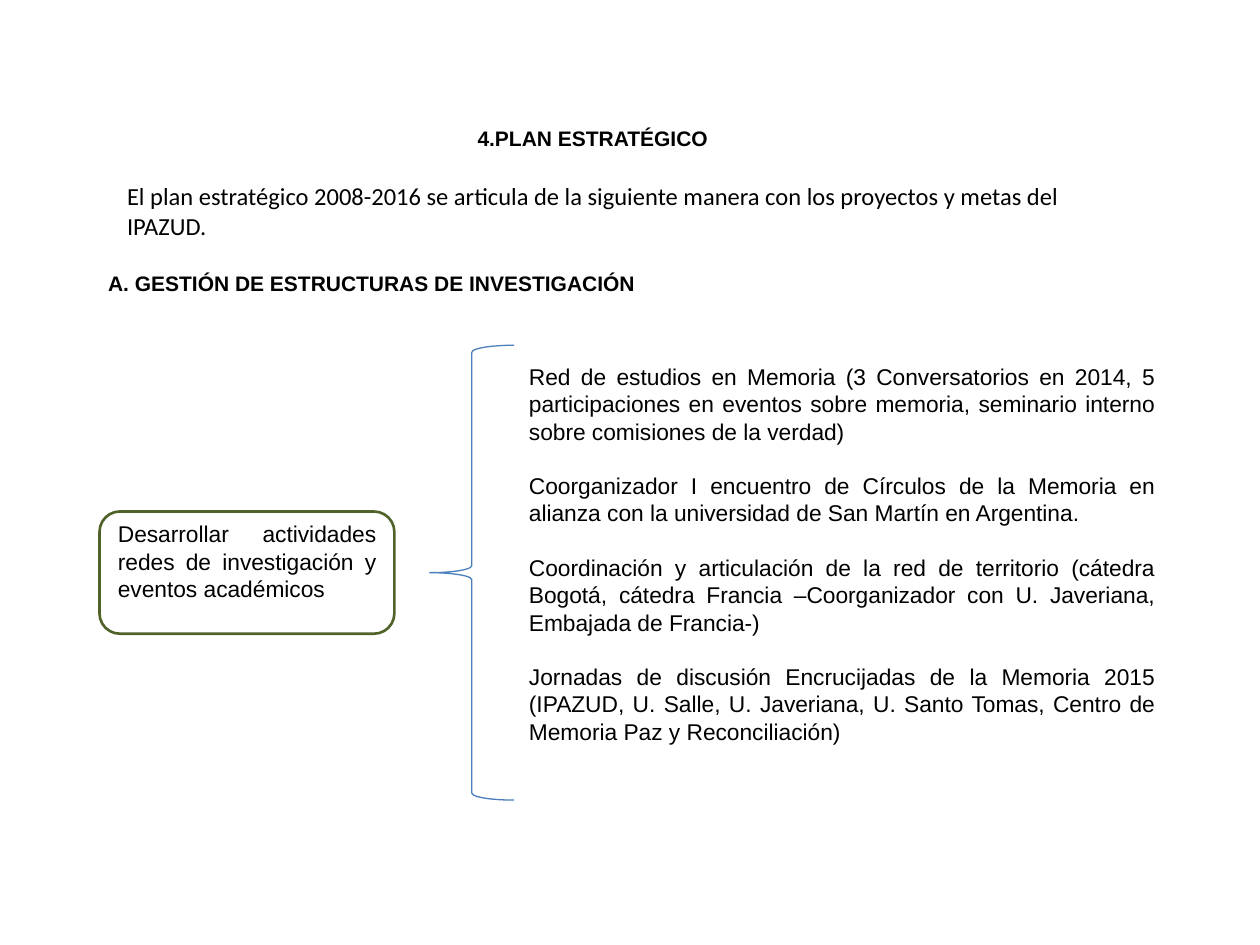
"""Build the strategic plan slide with its braced list of activities."""
from pptx import Presentation
from pptx.dml.color import RGBColor
from pptx.enum.shapes import MSO_SHAPE
from pptx.enum.text import MSO_ANCHOR, PP_ALIGN
from pptx.util import Inches, Pt


def color(value):
    return RGBColor.from_string(value)


def write_text(shape, *texts, font="Arial", size=13, bold=False, align=PP_ALIGN.LEFT,
               anchor=MSO_ANCHOR.TOP, wrap=True, gap=0):
    frame = shape.text_frame
    frame.word_wrap = wrap
    frame.vertical_anchor = anchor
    for index, text in enumerate(texts):
        paragraph = frame.add_paragraph() if index else frame.paragraphs[0]
        paragraph.alignment = align
        if index:
            paragraph.space_before = Pt(gap)
        run = paragraph.add_run()
        run.text = text
        run.font.name = font
        run.font.size = Pt(size)
        run.font.bold = bold
        run.font.color.rgb = color("000000")


presentation = Presentation()
presentation.slide_width = Inches(10)
presentation.slide_height = Inches(7.5)
slide = presentation.slides.add_slide(presentation.slide_layouts[6])
shapes = slide.shapes

title = shapes.add_textbox(Inches(3.01), Inches(0.78), Inches(3.39), Inches(0.63))
write_text(title, "4.PLAN ESTRATÉGICO", size=12, bold=True,
           align=PP_ALIGN.CENTER, anchor=MSO_ANCHOR.MIDDLE)

heading = shapes.add_textbox(Inches(0.76), Inches(2.1), Inches(4.43), Inches(0.3))
write_text(heading, "A. GESTIÓN DE ESTRUCTURAS DE INVESTIGACIÓN",
           size=12, bold=True, wrap=False)

goal = shapes.add_shape(MSO_SHAPE.ROUNDED_RECTANGLE, Inches(0.79), Inches(4.06),
                        Inches(2.34), Inches(0.97))
goal.shadow.inherit = False
goal.fill.solid()
goal.fill.fore_color.rgb = color("FFFFFF")
goal.line.color.rgb = color("4F6228")
goal.line.width = Pt(1.5)
goal.text_frame.margin_top = Inches(0.02)
write_text(goal, "Desarrollar actividades redes de investigación y eventos académicos",
           align=PP_ALIGN.JUSTIFY)

introduction = shapes.add_textbox(Inches(0.91), Inches(1.39), Inches(8.11), Inches(0.57))
write_text(introduction, "El plan estratégico 2008-2016 se articula de la siguiente manera "
           "con los proyectos y metas del IPAZUD.", font="Calibri", size=14)

brace = shapes.add_shape(MSO_SHAPE.LEFT_BRACE, Inches(3.41), Inches(2.74),
                         Inches(0.67), Inches(3.61))
brace.shadow.inherit = False
brace.fill.background()
brace.line.color.rgb = color("4B7EBC")
brace.line.width = Pt(0.75)

activities = shapes.add_textbox(Inches(4.1), Inches(2.83), Inches(5.16), Inches(3.16))
write_text(
    activities,
    "Red de estudios en Memoria (3 Conversatorios en 2014, 5 participaciones en eventos "
    "sobre memoria, seminario interno sobre comisiones de la verdad)",
    "Coorganizador I encuentro de Círculos de la Memoria en alianza con la universidad "
    "de San Martín en Argentina.",
    "Coordinación y articulación de la red de territorio (cátedra Bogotá, cátedra Francia "
    "–Coorganizador con U. Javeriana, Embajada de Francia-)",
    "Jornadas de discusión Encrucijadas de la Memoria 2015 (IPAZUD, U. Salle, U. Javeriana, "
    "U. Santo Tomas, Centro de Memoria Paz y Reconciliación)",
    align=PP_ALIGN.JUSTIFY, gap=15.5)

presentation.save("out.pptx")
